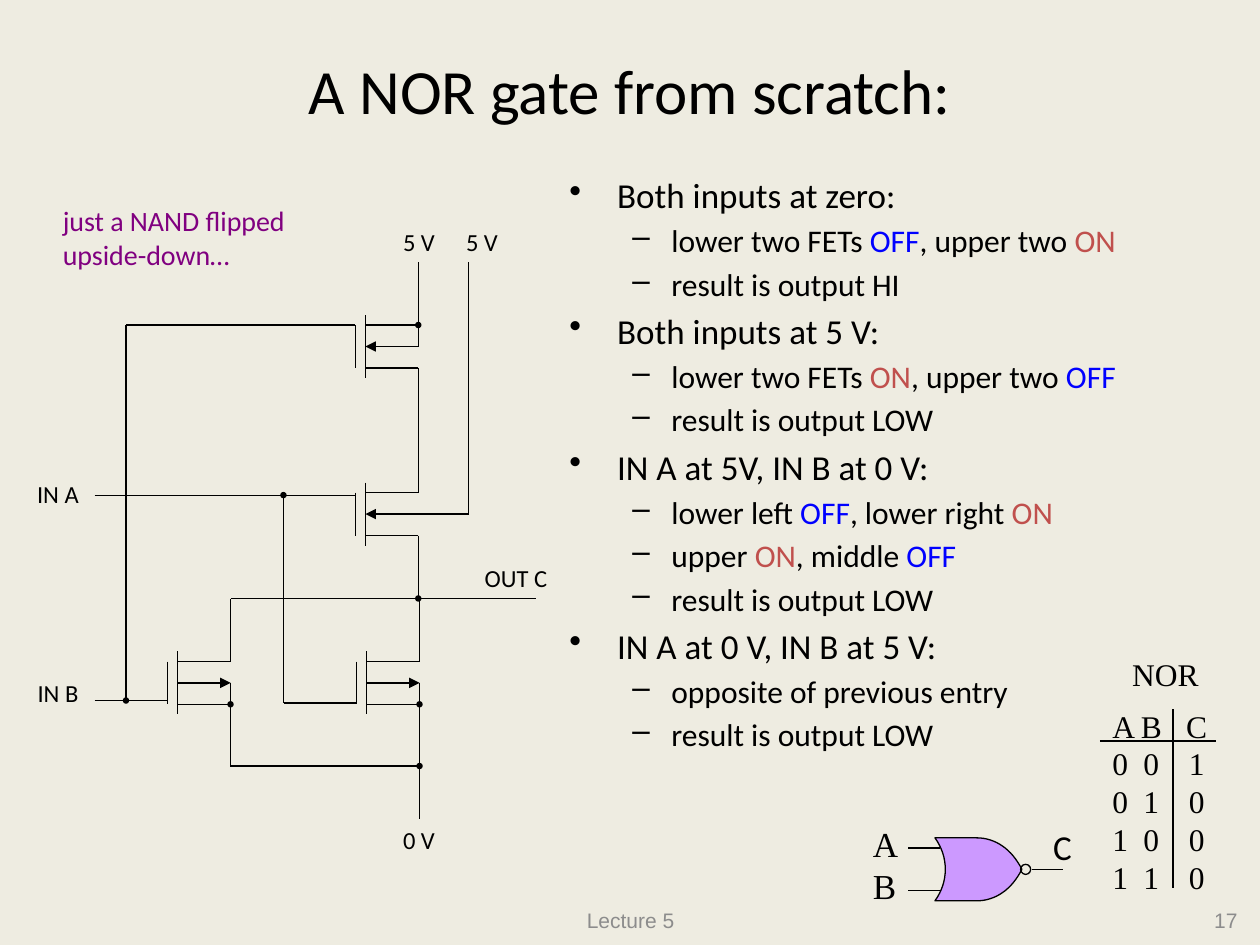
from lxml.etree import SubElement
from pptx import Presentation
from pptx.dml.color import RGBColor
from pptx.enum.shapes import MSO_CONNECTOR, MSO_SHAPE
from pptx.enum.text import MSO_ANCHOR, PP_ALIGN
from pptx.oxml.ns import qn
from pptx.util import Inches, Pt

BLACK = "000000"
WORD_COLORS = {"OFF": "0000FF", "ON": "C0504D"}
SERIF = "Times New Roman"
CASES = [
    ("Both inputs at zero:",
     ["lower two FETs |OFF|, upper two |ON", "result is output HI"]),
    ("Both inputs at 5 V:",
     ["lower two FETs |ON|, upper two |OFF", "result is output LOW"]),
    ("IN A at 5V, IN B at 0 V:",
     ["lower left |OFF|, lower right |ON", "upper |ON|, middle |OFF",
      "result is output LOW"]),
    ("IN A at 0 V, IN B at 5 V:",
     ["opposite of previous entry", "result is output LOW"]),
]


def rgb(color):
    return RGBColor.from_string(color)


def add_text(s, box, lines, size, color=BLACK, font="Calibri",
             align=PP_ALIGN.LEFT, anchor=MSO_ANCHOR.TOP, wrap=False):
    tf = s.shapes.add_textbox(*map(Inches, box)).text_frame
    tf.word_wrap = wrap
    tf.vertical_anchor = anchor
    tf.text = "\n".join(lines)
    for p in tf.paragraphs:
        p.alignment = align
        p.font.size = Pt(size)
        p.font.name = font
        p.font.color.rgb = rgb(color)
    return tf


def add_wire(s, x, y, *points, arrow=False):
    for (x1, y1), (x2, y2) in zip(points, points[1:]):
        line = s.shapes.add_connector(MSO_CONNECTOR.STRAIGHT, *map(
            Inches, (x + x1, y + y1, x + x2, y + y2)))
        line.line.color.rgb = rgb(BLACK)
        line.line.width = Pt(0.75)
        sp_pr = line._element.spPr
        if arrow:
            SubElement(sp_pr.find(qn("a:ln")), qn("a:tailEnd"), type="triangle")
        SubElement(sp_pr, qn("a:effectLst"))


def add_circle(s, cx, cy, d, filled=True):
    sp = s.shapes.add_shape(MSO_SHAPE.OVAL, *map(
        Inches, (cx - d / 2, cy - d / 2, d, d)))
    style_shape(sp, BLACK if filled else None)


def style_shape(sp, fill):
    sp.shadow.inherit = False
    if fill:
        sp.fill.solid()
        sp.fill.fore_color.rgb = rgb(fill)
    else:
        sp.fill.background()
    sp.line.color.rgb = rgb(BLACK)
    sp.line.width = Pt(0.75)


def add_fet(s, x, y, kind):
    channel, edge, top, mid, bottom = 0.08, 0.5, 0.08, 0.25, 0.42
    add_wire(s, x, y, (0, top), (0, bottom))
    add_wire(s, x, y, (channel, 0), (channel, 0.5))
    add_wire(s, x, y, (channel, top), (edge, top), (edge, top - 0.5))
    add_wire(s, x, y, (channel, bottom), (edge, bottom), (edge, bottom + 0.5))
    if kind == "floating":
        add_wire(s, x, y, (0.9, mid), (channel, mid), arrow=True)
        return
    body = [(edge, mid), (channel, mid)]
    tie = top
    if kind == "lower":
        body.reverse()
        tie = bottom
    add_wire(s, x, y, *body, arrow=True)
    add_wire(s, x, y, (edge, mid), (edge, tie))
    add_circle(s, x + edge, y + tie, 0.04)


def add_circuit(s, x, y):
    for dx, dy, kind in [(2.07, 0.75, "upper"), (2.07, 2.08, "floating"),
                         (2.08, 3.42, "lower"), (0.58, 3.42, "lower")]:
        add_fet(s, x + dx, y + dy, kind)
    for points in [
        [(0, 3.81), (0.58, 3.81)],
        [(0.25, 3.81), (0.25, 0.83), (2.07, 0.83)],
        [(0, 2.18), (2.07, 2.18)],
        [(1.5, 2.18), (1.5, 3.83), (2.08, 3.83)],
        [(1.08, 3), (3.5, 3)],
        [(1.08, 4.33), (2.58, 4.33), (2.58, 4.75)],
        [(2.97, 0.33), (2.97, 2.33)],
    ]:
        add_wire(s, x, y, *points)
    for dx, dy in [(0.25, 3.81), (2.57, 3), (1.5, 2.18), (2.58, 4.33)]:
        add_circle(s, x + dx, y + dy, 0.04)
    for label, dx, dy, w in [
        ("5 V", 2.33, 0, 0.49), ("5 V", 2.83, 0, 0.49), ("0 V", 2.33, 4.75, 0.49),
        ("IN A", -0.58, 2, 0.58), ("IN B", -0.58, 3.58, 0.58),
        ("OUT C", 2.94, 2.67, 0.81),
    ]:
        add_text(s, (x + dx, y + dy, w, 0.33), [label], 14, align=PP_ALIGN.CENTER)


def add_cases(s, box):
    rows = []
    for heading, details in CASES:
        rows += [(heading, 0)] + [(detail, 1) for detail in details]
    tf = add_text(s, box, [""] * len(rows), 18, wrap=True)
    for p, (text, level) in zip(tf.paragraphs, rows):
        size, before, bullet, left, hang = [
            (20, 3.9, "•", 0.38, 0.38), (18, 3.2, "–", 0.81, 0.31)][level]
        p.level = level
        p.font.size = Pt(size)
        p.space_before = Pt(before)
        p_pr = p._p.get_or_add_pPr()
        p_pr.set("marL", str(Inches(left)))
        p_pr.set("indent", str(-Inches(hang)))
        bu = p_pr.makeelement(qn("a:buChar"), {"char": bullet})
        p_pr.find(qn("a:defRPr")).addprevious(bu)
        for part in text.split("|"):
            r = p.add_run()
            r.text = part
            if part in WORD_COLORS:
                r.font.color.rgb = rgb(WORD_COLORS[part])


def add_truth_table(s, x, y):
    add_text(s, (x + 0.07, y, 0.9, 0.5), ["NOR"], 18, font=SERIF,
             align=PP_ALIGN.CENTER)
    rows = [("A", "B", "C")] + [
        (str(a), str(b), str(int(not (a or b)))) for a in (0, 1) for b in (0, 1)]
    tf = add_text(s, (x, y + 0.41, 0.97, 1.6), ["\t".join(row) for row in rows],
                  18, font=SERIF)
    for p in tf.paragraphs:
        p_pr = p._p.get_or_add_pPr()
        tabs = p_pr.makeelement(qn("a:tabLst"), {})
        for pos in (0.31, 0.67):
            SubElement(tabs, qn("a:tab"), pos=str(Inches(pos)), algn="ctr")
        p_pr.find(qn("a:defRPr")).addprevious(tabs)
    add_wire(s, x, y, (0, 0.73), (0.92, 0.73))
    add_wire(s, x, y, (0.58, 0.48), (0.58, 1.9))


def curve(p0, p1, p2, p3, steps=16):
    return [tuple((1 - t) ** 3 * a + 3 * t * (1 - t) ** 2 * b
                  + 3 * t * t * (1 - t) * c + t ** 3 * d
                  for a, b, c, d in zip(p0, p1, p2, p3))
            for t in (i / steps for i in range(steps + 1))]


def add_gate(s, x, y):
    nose = curve((0.33, 0), (0.48, 0), (0.61, 0.09), (0.69, 0.25))
    back = curve((0, 0.5), (0.11, 0.35), (0.11, 0.15), (0, 0))
    outline = nose + [(px, 0.5 - py) for px, py in reversed(nose)] + back
    points = [(Inches(x + px), Inches(y + py)) for px, py in outline]
    builder = s.shapes.build_freeform(*points[0])
    builder.add_line_segments(points[1:], close=True)
    style_shape(builder.convert_to_shape(), "CC99FF")
    for dx, dy in [(-0.21, 0.08), (-0.21, 0.42), (0.77, 0.25)]:
        add_wire(s, x, y, (dx, dy), (dx + 0.25, dy))
    add_circle(s, x + 0.72, y + 0.25, 0.08, filled=False)
    add_text(s, (x - 0.59, y - 0.17, 0.4, 0.77), ["A", "B"], 20, font=SERIF)
    add_text(s, (x + 0.84, y - 0.15, 0.4, 0.43), ["C"], 20)


def add_footer(s, y):
    for text, x, w, align in [("Lecture 5", 3.42, 3.17, PP_ALIGN.CENTER),
                              ("17", 7.59, 2.33, PP_ALIGN.RIGHT)]:
        add_text(s, (x, y, w, 0.4), [text], 12, "8C8C8C", "Arial", align,
                 MSO_ANCHOR.MIDDLE, True)


def main():
    prs = Presentation()
    prs.slide_width, prs.slide_height = Inches(10), Inches(7.5)
    s = prs.slides.add_slide(prs.slide_layouts[6])
    s.background.fill.solid()
    s.background.fill.fore_color.rgb = rgb("EEECE1")
    add_footer(s, 7.1)
    add_text(s, (0.75, 0.08, 8.5, 1.25), ["A NOR gate from scratch:"], 36,
             align=PP_ALIGN.CENTER, anchor=MSO_ANCHOR.MIDDLE, wrap=True)
    add_cases(s, (4.42, 1.33, 5.42, 5.5))
    add_circuit(s, 0.75, 1.75)
    add_text(s, (0.4, 1.57, 2.14, 0.64),
             ["just a NAND flipped", "upside-down…"], 16, "800080")
    add_truth_table(s, 8.73, 5.15)
    add_gate(s, 7.42, 6.65)
    prs.save("out.pptx")


if __name__ == "__main__":
    main()
